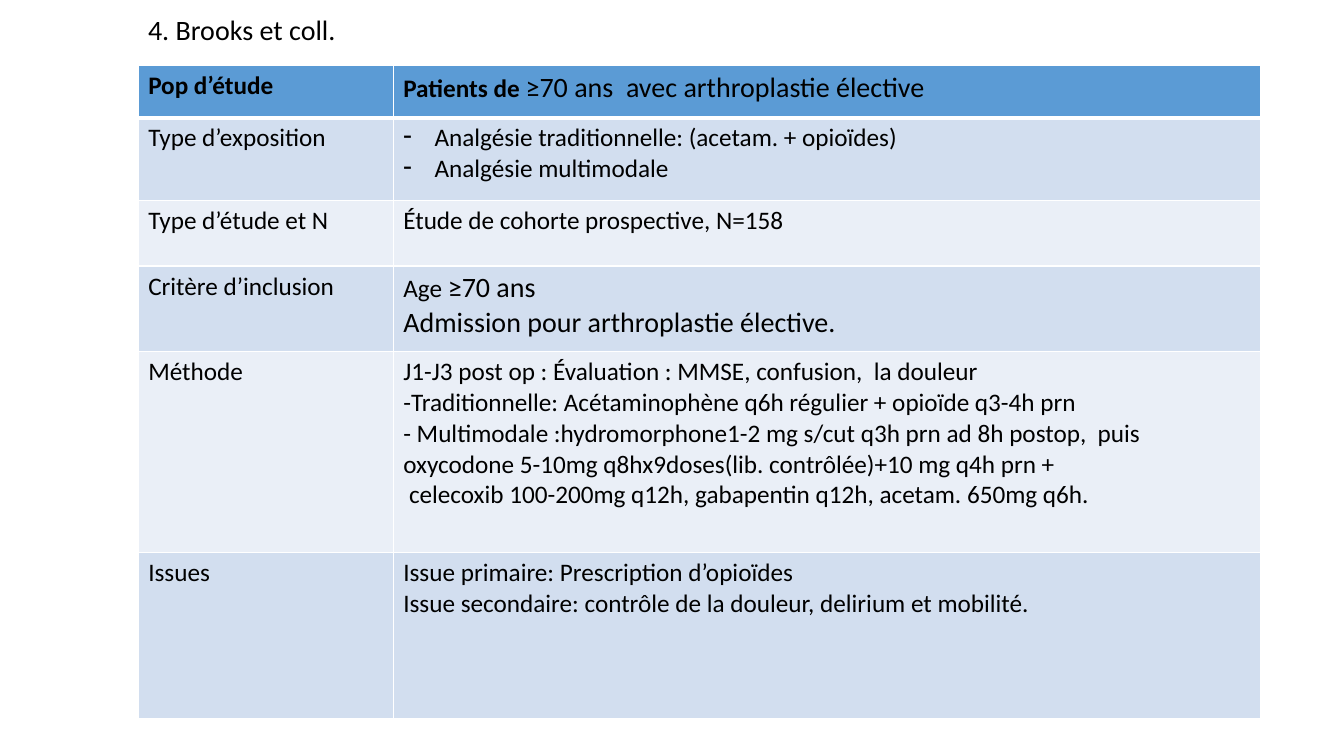
from lxml import etree
from pptx import Presentation
from pptx.dml.color import RGBColor
from pptx.enum.text import MSO_ANCHOR
from pptx.oxml.ns import qn
from pptx.util import Inches, Pt

BLACK = RGBColor(0x00, 0x00, 0x00)
WHITE = RGBColor(0xFF, 0xFF, 0xFF)
HEADER_BLUE = RGBColor(0x5B, 0x9B, 0xD5)
BANDS = (RGBColor(0xD2, 0xDE, 0xEF), RGBColor(0xEA, 0xEF, 0xF7))
MIDDLE = MSO_ANCHOR.MIDDLE

FONT = "Calibri"
BODY, LARGE = 18, 20

# Shares of the slide's size, in percent
LEFT, WIDTH = 10.28, 83.5
TITLE_TOP, TITLE_HEIGHT = 1.33, 5.73
TABLE_TOP = 8.67
COLUMNS = (18.98, 64.52)

# Row height, label, paragraphs; a paragraph is a text or a list of (text, format)
STUDY = [
    (6.93, "Pop d’étude", [[
        ("Patients de ", {"bold": True}),
        ("≥70 ans  avec arthroplastie élective", {"size": LARGE})]]),
    (10.93, "Type d’exposition", [
        "Analgésie traditionnelle: (acetam. + opioïdes)",
        "Analgésie multimodale"]),
    (8.67, "Type d’étude et N", ["Étude de cohorte prospective, N=158"]),
    (11.33, "Critère d’inclusion", [
        [("Age ", {}), ("≥70 ans", {"size": LARGE})],
        [("Admission pour arthroplastie élective.", {"size": LARGE})]]),
    (26.53, "Méthode", [
        "J1-J3 post op : Évaluation : MMSE, confusion,  la douleur",
        "-Traditionnelle: Acétaminophène q6h régulier + opioïde q3-4h prn",
        "- Multimodale :hydromorphone1-2 mg s/cut q3h prn ad 8h postop,  puis "
        "oxycodone 5-10mg q8hx9doses(lib. contrôlée)+10 mg q4h prn +",
        " celecoxib 100-200mg q12h, gabapentin q12h, acetam. 650mg q6h."]),
    (22, "Issues", [
        "Issue primaire: Prescription d’opioïdes",
        "Issue secondaire: contrôle de la douleur, delirium et mobilité."]),
]
EXPOSURE_ROW = 1


def add_text(p, text, size=BODY, bold=False, color=BLACK):
    r = p.add_run()
    r.text = text
    r.font.name = FONT
    r.font.size = Pt(size)
    r.font.bold = bold
    r.font.color.rgb = color


def add_dash(p, indent=Inches(0.31)):
    pPr = p._p.get_or_add_pPr()
    pPr.set("marL", str(indent))
    pPr.set("indent", str(-indent))
    etree.SubElement(pPr, qn("a:buFontTx"))
    etree.SubElement(pPr, qn("a:buChar"), char="-")


def set_borders(cell, bottom):
    """Draw white cell borders, 1 pt except for the bottom one."""
    tcPr = cell._tc.get_or_add_tcPr()
    widths = {"a:lnL": 1, "a:lnR": 1, "a:lnT": 1, "a:lnB": bottom}
    for i, (tag, width) in enumerate(widths.items()):
        ln = etree.Element(qn(tag), w=str(Pt(width)))
        fill = etree.SubElement(ln, qn("a:solidFill"))
        etree.SubElement(fill, qn("a:srgbClr"), val=str(WHITE))
        tcPr.insert(i, ln)


class StudySlide:
    def __init__(self, prs):
        self.width, self.height = prs.slide_width, prs.slide_height
        self.s = prs.slides.add_slide(prs.slide_layouts[6])

    def x(self, share):
        return round(self.width * share / 100)

    def y(self, share):
        return round(self.height * share / 100)

    def title(self, text):
        sp = self.s.shapes.add_textbox(self.x(LEFT), self.y(TITLE_TOP),
                                       self.x(WIDTH), self.y(TITLE_HEIGHT))
        tf = sp.text_frame
        tf.word_wrap = True
        tf.vertical_anchor = MIDDLE
        p = tf.paragraphs[0]
        p.line_spacing = 0.9
        add_text(p, text, size=LARGE)

    def cell(self, cell, paragraphs, fill, bottom=1, bold=False, dashed=False):
        cell.fill.solid()
        cell.fill.fore_color.rgb = fill
        set_borders(cell, bottom)
        tf = cell.text_frame
        for i, runs in enumerate(paragraphs):
            p = tf.add_paragraph() if i else tf.paragraphs[0]
            if dashed:
                add_dash(p)
            if isinstance(runs, str):
                runs = [(runs, {"bold": bold})]
            for text, style in runs:
                add_text(p, text, **style)

    def table(self, rows):
        height = sum(row[0] for row in rows)
        table = self.s.shapes.add_table(
            len(rows), len(COLUMNS), self.x(LEFT), self.y(TABLE_TOP),
            self.x(WIDTH), self.y(height)).table
        for column, share in zip(table.columns, COLUMNS):
            column.width = self.x(share)
        for i, (share, label, paragraphs) in enumerate(rows):
            table.rows[i].height = self.y(share)
            header = i == 0
            fill = HEADER_BLUE if header else BANDS[(i - 1) % 2]
            bottom = 3 if header else 1
            self.cell(table.cell(i, 0), [label], fill, bottom, bold=header)
            self.cell(table.cell(i, 1), paragraphs, fill, bottom,
                      dashed=i == EXPOSURE_ROW)


def main():
    prs = Presentation()
    prs.slide_width, prs.slide_height = Inches(13.33), Inches(7.5)
    slide = StudySlide(prs)
    slide.title("4. Brooks et coll.")
    slide.table(STUDY)
    prs.save("out.pptx")


if __name__ == "__main__":
    main()
